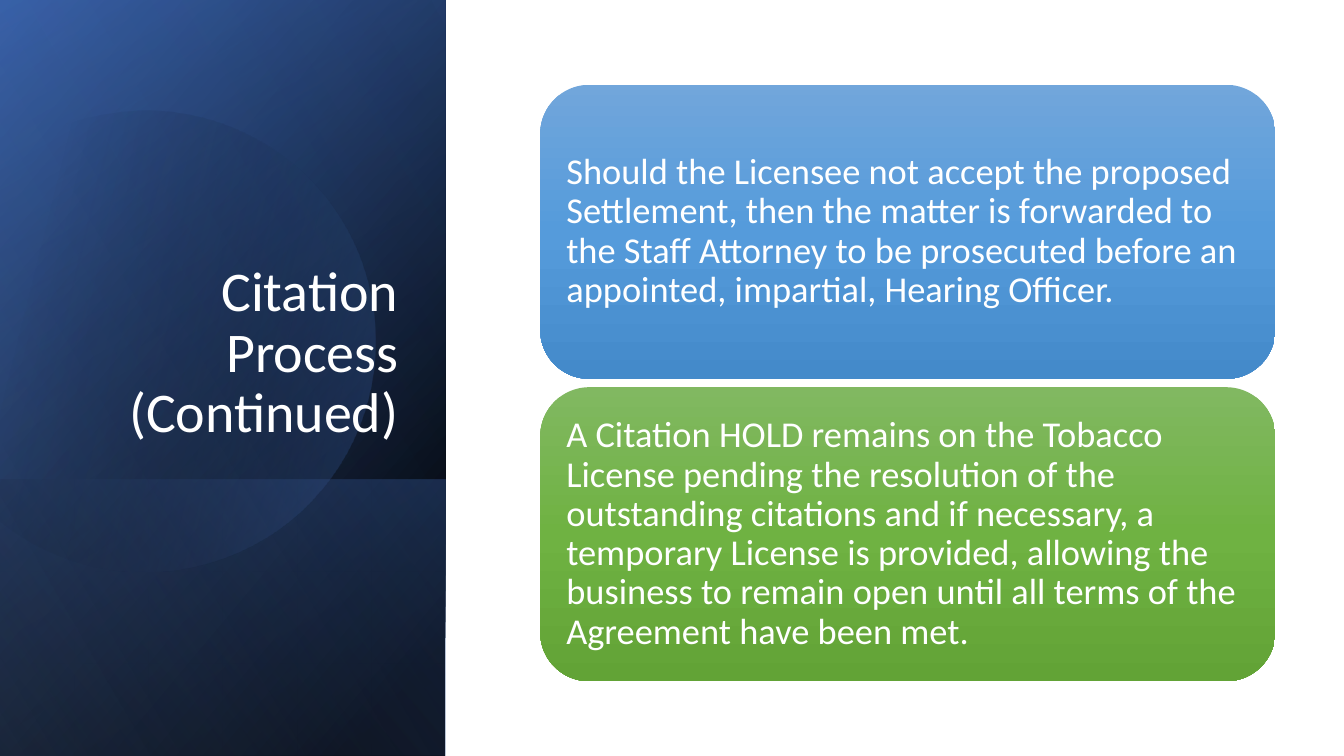
from dataclasses import dataclass
from math import cos, radians, sin

from lxml.etree import SubElement
from pptx import Presentation
from pptx.dml.color import RGBColor
from pptx.enum.shapes import MSO_SHAPE as SHAPE
from pptx.enum.text import MSO_ANCHOR as ANCHOR, PP_ALIGN as ALIGN
from pptx.oxml.ns import qn
from pptx.util import Pt

WHITE = RGBColor(0xFF, 0xFF, 0xFF)
BLACK = RGBColor(0x00, 0x00, 0x00)
NAVY = RGBColor(0x2F, 0x55, 0x97)
BLUE = RGBColor(0x44, 0x72, 0xC4)
PALE_BLUE = RGBColor(0x8F, 0xAA, 0xDC)
SKY_TOP = RGBColor(0x71, 0xA6, 0xDB)
SKY_MID = RGBColor(0x55, 0x9B, 0xDB)
SKY_END = RGBColor(0x44, 0x8A, 0xCA)
GREEN_TOP = RGBColor(0x81, 0xB8, 0x61)
GREEN_MID = RGBColor(0x6F, 0xB2, 0x42)
GREEN_END = RGBColor(0x62, 0xA3, 0x36)

FONT = "Calibri"
SLIDE_W, SLIDE_H = 960, 540
PANEL_W = 318.24
CARD_X, CARD_Y, CARD_W, CARD_H, CARD_STEP = 385.92, 60.6, 525, 210, 216


@dataclass
class Stop:
    pos: int
    color: RGBColor
    alpha: int = 100


@dataclass
class Gradient:
    angle: int
    stops: list[Stop]


@dataclass
class Layer:
    height: float
    gradient: Gradient


@dataclass
class Card:
    text: str
    gradient: Gradient


BACK_LAYERS = [
    Layer(SLIDE_H, Gradient(50, [Stop(8, BLACK), Stop(100, NAVY)])),
    Layer(SLIDE_H, Gradient(30, [Stop(0, BLACK, 0), Stop(99, BLUE, 46)])),
    Layer(197.28, Gradient(130, [Stop(2, BLUE, 29), Stop(100, BLACK, 30)])),
]
FRONT_LAYER = Layer(
    SLIDE_H, Gradient(120, [Stop(0, BLACK, 0), Stop(99, PALE_BLUE, 11)]))

# Disc outline as it lies on the slide: one point is a line, three are a curve
DISC_START = (107.3, 79.2)
DISC_SEGMENTS = [
    [(177.1, 80.6), (241.2, 127.4), (261.4, 198)],
    [(286.6, 285.8), (236.2, 376.6), (149, 401.8)],
    [(94.3, 417.6), (38.2, 403.9), (-2.2, 370.1)],
    [(-10.8, 362.2)],
    [(-10.8, 126)],
    [(0, 115.9)],
    [(16.6, 102.2), (36, 92.2), (57.6, 85.7)],
    [(74.2, 81.4), (90.7, 79.2), DISC_START],
]
DISC_CENTER = (114.12, 240.84)
DISC_TILT = -16.1
DISC_GRADIENT = Gradient(30, [Stop(29, BLACK, 0), Stop(100, BLUE, 43)])
CURVE_STEPS = 24

CARDS = [
    Card("Should the Licensee not accept the proposed Settlement, then the "
         "matter is forwarded to the Staff Attorney to be prosecuted before "
         "an appointed, impartial, Hearing Officer.",
         Gradient(90, [Stop(0, SKY_TOP), Stop(50, SKY_MID),
                       Stop(100, SKY_END)])),
    Card("A Citation HOLD remains on the Tobacco License pending the "
         "resolution of the outstanding citations and if necessary, a "
         "temporary License is provided, allowing the business to remain "
         "open until all terms of the Agreement have been met.",
         Gradient(90, [Stop(0, GREEN_TOP), Stop(50, GREEN_MID),
                       Stop(100, GREEN_END)])),
]


def paint(sp, gradient: Gradient) -> None:
    """Fill with a gradient, without outline or shadow."""
    sp.shadow.inherit = False
    sp.line.fill.background()
    sp.fill.gradient()
    grad = sp._element.spPr.find(qn("a:gradFill"))
    for child in list(grad):
        grad.remove(child)
    stops = SubElement(grad, qn("a:gsLst"))
    for stop in gradient.stops:
        gs = SubElement(stops, qn("a:gs"), pos=str(stop.pos * 1000))
        color = SubElement(gs, qn("a:srgbClr"), val=str(stop.color))
        if stop.alpha < 100:
            SubElement(color, qn("a:alpha"), val=str(stop.alpha * 1000))
    SubElement(grad, qn("a:lin"), ang=str(gradient.angle * 60000), scaled="0")


def add_layer(s, layer: Layer) -> None:
    """Add a mirrored quarter-turned rectangle along the panel's foot."""
    mid_x, mid_y = PANEL_W / 2, SLIDE_H - layer.height / 2
    sp = s.shapes.add_shape(
        SHAPE.RECTANGLE, Pt(mid_x - layer.height / 2),
        Pt(mid_y - PANEL_W / 2), Pt(layer.height), Pt(PANEL_W))
    sp.rotation = 90
    sp._element.spPr.xfrm.set("flipH", "1")
    paint(sp, layer.gradient)


def curve(p0, p1, p2, p3) -> list[tuple[float, float]]:
    """Points along a cubic Bezier curve."""
    points = []
    for i in range(1, CURVE_STEPS + 1):
        t = i / CURVE_STEPS
        u = 1 - t
        weights = (u ** 3, 3 * u * u * t, 3 * u * t * t, t ** 3)
        points.append(tuple(
            sum(w * p[axis] for w, p in zip(weights, (p0, p1, p2, p3)))
            for axis in (0, 1)))
    return points


def untilt(point) -> tuple[int, int]:
    """Turn a disc point back to its place before rotation."""
    cx, cy = DISC_CENTER
    dx, dy = point[0] - cx, point[1] - cy
    c, n = cos(radians(-DISC_TILT)), sin(radians(-DISC_TILT))
    return Pt(cx + dx * c - dy * n), Pt(cy + dx * n + dy * c)


def add_disc(s) -> None:
    outline = [DISC_START]
    for segment in DISC_SEGMENTS:
        outline += curve(outline[-1], *segment) if len(segment) == 3 else segment
    start, *rest = [untilt(point) for point in outline]
    builder = s.shapes.build_freeform(*start)
    builder.add_line_segments(rest, close=True)
    sp = builder.convert_to_shape()
    sp.rotation = DISC_TILT
    paint(sp, DISC_GRADIENT)


def write(tf, text: str, size: int, align, anchor) -> None:
    tf.word_wrap = True
    tf.vertical_anchor = anchor
    p = tf.paragraphs[0]
    p.alignment = align
    p.line_spacing = 0.9
    r = p.add_run()
    r.text = text
    r.font.name = FONT
    r.font.size = Pt(size)
    r.font.color.rgb = WHITE


def add_card(s, index: int, card: Card) -> None:
    sp = s.shapes.add_shape(
        SHAPE.ROUNDED_RECTANGLE, Pt(CARD_X), Pt(CARD_Y + index * CARD_STEP),
        Pt(CARD_W), Pt(CARD_H))
    paint(sp, card.gradient)
    tf = sp.text_frame
    tf.margin_left = tf.margin_right = Pt(8.4)
    tf.margin_top = tf.margin_bottom = Pt(8.4)
    write(tf, card.text, 26, ALIGN.LEFT, ANCHOR.MIDDLE)


def main() -> None:
    prs = Presentation()
    prs.slide_width, prs.slide_height = Pt(SLIDE_W), Pt(SLIDE_H)
    s = prs.slides.add_slide(prs.slide_layouts[6])

    # Dark side panel
    for layer in BACK_LAYERS:
        add_layer(s, layer)
    add_disc(s)
    add_layer(s, FRONT_LAYER)

    # Title
    title = s.shapes.add_textbox(Pt(46.08), Pt(132.48), Pt(245.52), Pt(188.64))
    write(title.text_frame, "Citation Process (Continued)", 40,
          ALIGN.RIGHT, ANCHOR.BOTTOM)

    # Cards
    for index, card in enumerate(CARDS):
        add_card(s, index, card)

    prs.save("out.pptx")


if __name__ == "__main__":
    main()
